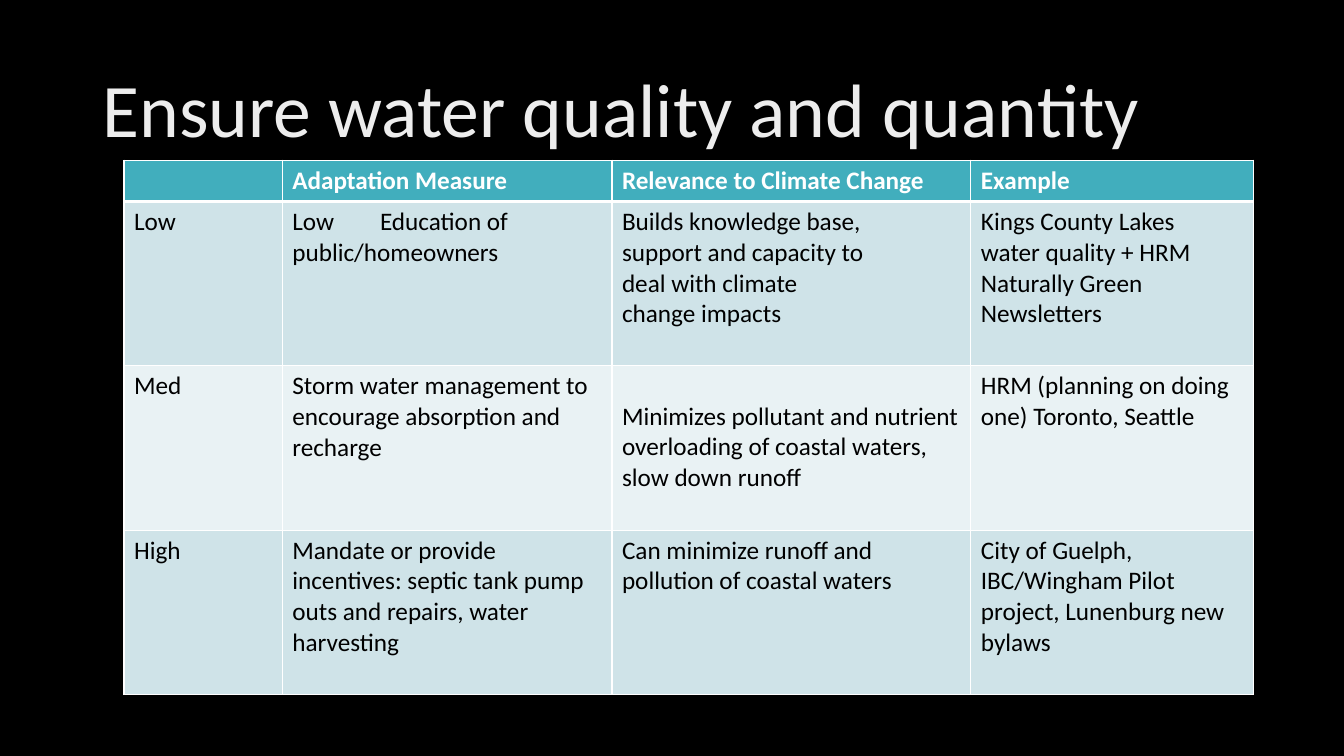
from dataclasses import dataclass

from lxml import etree
from pptx import Presentation
from pptx import util as u
from pptx.dml.color import RGBColor
from pptx.enum import text
from pptx.oxml.ns import qn


@dataclass(frozen=True)
class Theme:
    font: str = "Calibri"
    title_size: int = 54
    body_size: int = 18
    background: str = "000000"
    header: str = "41AEBD"
    bands: tuple = ("CFE3E8", "E9F2F4")
    white: str = "FFFFFF"
    ink: str = "000000"
    title_stops: tuple = ((0, "BFBFBF"), (28, "EDEDED"), (100, "FFFFFF"))
    title_angle: int = 80
    rule: int = 1
    header_rule: int = 3


THEME = Theme()
WIDTH, HEIGHT = 13.33, 7.5
TABLE_LEFT, TABLE_TOP = 1.23, 1.59
COLUMNS = (1.57, 3.27, 3.56, 2.8)
HEADER_HEIGHT, LEVEL_HEIGHT = 0.41, 1.63
LINE = 0.3
EXAMPLE_TAB = 0.87

MEASURES = (
    ("", "Adaptation Measure", "Relevance to Climate Change", "Example"),
    ("Low", "Low\tEducation of\npublic/homeowners",
     "Builds knowledge base,\nsupport and capacity to\ndeal with climate\nchange impacts",
     "Kings County Lakes\nwater quality + HRM\nNaturally Green\nNewsletters"),
    ("Med", "Storm water management to encourage absorption and recharge",
     "Minimizes pollutant and nutrient overloading of coastal waters, slow down runoff",
     "HRM (planning on doing one) Toronto, Seattle"),
    ("High", "Mandate or provide incentives: septic tank pump outs and repairs, water harvesting",
     "Can minimize runoff and pollution of coastal waters",
     "City of Guelph, IBC/Wingham Pilot project, Lunenburg new bylaws"),
)
LOWERED_CELL = (2, 2)


def add_tab_stop(paragraph, inches):
    tabs = etree.SubElement(paragraph._p.get_or_add_pPr(), qn("a:tabLst"))
    etree.SubElement(tabs, qn("a:tab"), pos=str(u.Inches(inches)), algn="l")


def write(frame, content, *, size, color, bold=False, line_spacing=None):
    """Write one paragraph per line of content; return the last run."""
    for index, line in enumerate(content.split("\n")):
        paragraph = frame.add_paragraph() if index else frame.paragraphs[0]
        if "\t" in line:
            add_tab_stop(paragraph, EXAMPLE_TAB)
        if line_spacing:
            paragraph.line_spacing = line_spacing
        paragraph.font.size = u.Pt(size)
        run = paragraph.add_run()
        run.text = line
        run.font.name = THEME.font
        run.font.size = u.Pt(size)
        run.font.bold = bold
        run.font.color.rgb = RGBColor.from_string(color)
    return run


def shade_text(run, stops, angle):
    """Replace the run's solid colour by a linear gradient."""
    properties = run._r.get_or_add_rPr()
    gradient = etree.Element(qn("a:gradFill"))
    stop_list = etree.SubElement(gradient, qn("a:gsLst"))
    for percent, color in stops:
        stop = etree.SubElement(stop_list, qn("a:gs"), pos=str(percent * 1000))
        etree.SubElement(stop, qn("a:srgbClr"), val=color)
    etree.SubElement(gradient, qn("a:lin"), ang=str(angle * 60000), scaled="0")
    properties.replace(properties.find(qn("a:solidFill")), gradient)


def set_borders(cell, color, **widths):
    properties = cell._tc.get_or_add_tcPr()
    for side in "LRTB":
        line = etree.SubElement(properties, qn(f"a:ln{side}"),
                                w=str(u.Pt(widths.get(side, THEME.rule))))
        fill = etree.SubElement(line, qn("a:solidFill"))
        etree.SubElement(fill, qn("a:srgbClr"), val=color)


def add_title(slide, content):
    box = slide.shapes.add_textbox(u.Inches(0.92), u.Inches(0.4),
                                   u.Inches(11.5), u.Inches(1.45))
    frame = box.text_frame
    frame.word_wrap = True
    frame.vertical_anchor = text.MSO_ANCHOR.MIDDLE
    run = write(frame, content, size=THEME.title_size,
                color=THEME.title_stops[1][1], line_spacing=0.9)
    shade_text(run, THEME.title_stops, THEME.title_angle)


def format_cell(cell, content, row):
    is_header = row == 0
    header_edge = {0: "B", 1: "T"}.get(row)
    set_borders(cell, THEME.white,
                **({header_edge: THEME.header_rule} if header_edge else {}))
    cell.fill.solid()
    band = THEME.header if is_header else THEME.bands[(row - 1) % 2]
    cell.fill.fore_color.rgb = RGBColor.from_string(band)
    if content:
        write(cell.text_frame, content, size=THEME.body_size, bold=is_header,
              color=THEME.white if is_header else THEME.ink)


def add_measures(slide, measures):
    heights = [HEADER_HEIGHT] + [LEVEL_HEIGHT] * (len(measures) - 1)
    table = slide.shapes.add_table(
        len(measures), len(COLUMNS), u.Inches(TABLE_LEFT), u.Inches(TABLE_TOP),
        u.Inches(sum(COLUMNS)), u.Inches(sum(heights))).table
    for column, width in zip(table.columns, COLUMNS):
        column.width = u.Inches(width)
    for row, height in zip(table.rows, heights):
        row.height = u.Inches(height)
    for row, contents in enumerate(measures):
        for column, content in enumerate(contents):
            format_cell(table.cell(row, column), content, row)
    table.cell(*LOWERED_CELL).margin_top = u.Inches(0.05 + LINE)


def main():
    deck = Presentation()
    deck.slide_width, deck.slide_height = u.Inches(WIDTH), u.Inches(HEIGHT)
    slide = deck.slides.add_slide(deck.slide_layouts[6])
    slide.background.fill.solid()
    slide.background.fill.fore_color.rgb = RGBColor.from_string(THEME.background)
    add_title(slide, "Ensure water quality and quantity")
    add_measures(slide, MEASURES)
    deck.save("out.pptx")


if __name__ == "__main__":
    main()
